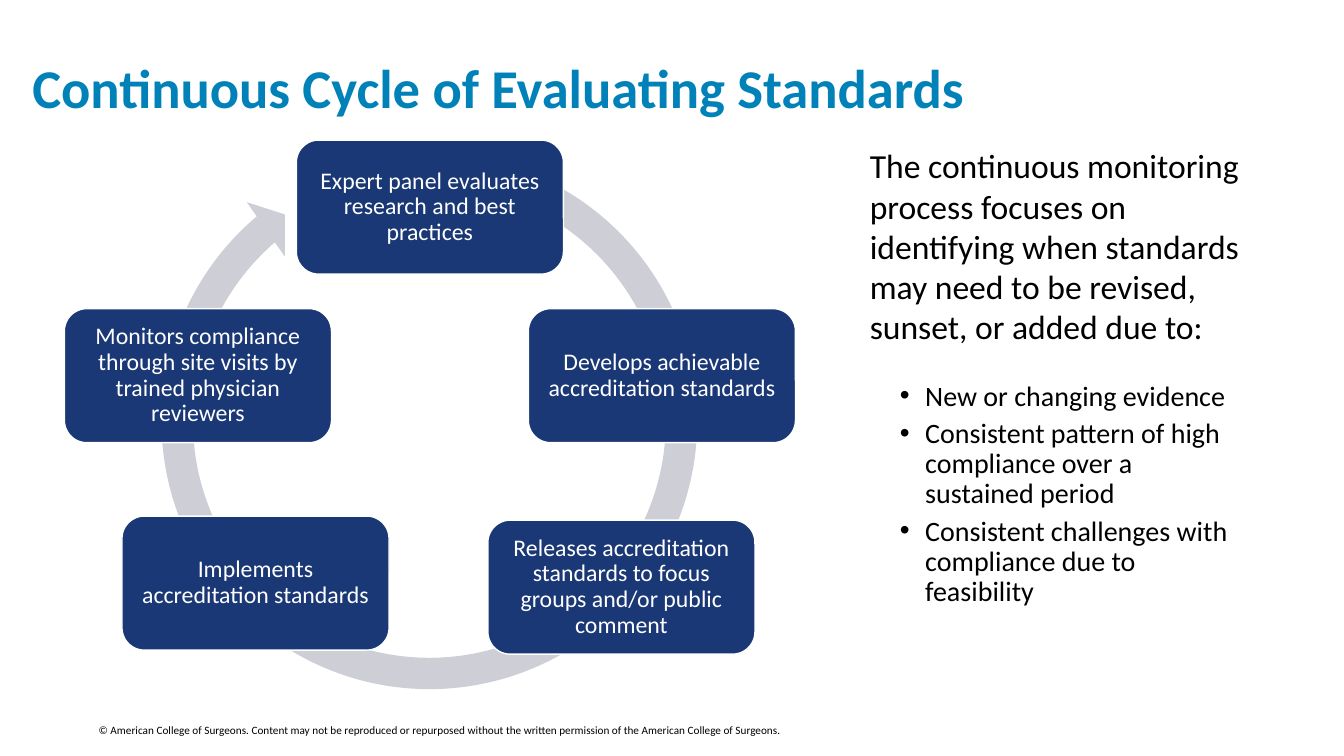
"""Build a slide on the continuous cycle of evaluating standards."""
from math import cos, radians, sin

from lxml import etree
from pptx import Presentation
from pptx.dml.color import RGBColor
from pptx.enum.shapes import MSO_SHAPE
from pptx.enum.text import MSO_ANCHOR, MSO_AUTO_SIZE, PP_ALIGN
from pptx.oxml.ns import qn
from pptx.util import Inches, Pt

LEFT, CENTER = PP_ALIGN.LEFT, PP_ALIGN.CENTER
TOP, MIDDLE = MSO_ANCHOR.TOP, MSO_ANCHOR.MIDDLE
NO_FIT, GROW = MSO_AUTO_SIZE.NONE, MSO_AUTO_SIZE.SHAPE_TO_FIT_TEXT
ROUNDED, CIRCLE_ARROW = MSO_SHAPE.ROUNDED_RECTANGLE, MSO_SHAPE.CIRCULAR_ARROW

COLOURS = {"title": "0082B8", "step": "1A3875", "ring": "CDCED6",
           "white": "FFFFFF", "black": "000000"}
WIDTH, HEIGHT = Inches(13.333), Inches(7.5)
COLUMNS = 160
CELL = WIDTH / COLUMNS

STEP_SIZE = (31.8, 15.96)
CYCLE_CENTRE = (51.18, 53.7)
CYCLE_RADIUS = 29.04
STEPS = [
    ("Expert panel evaluates research and best practices", (0, 0)),
    ("Develops achievable accreditation standards", (0, 0)),
    ("Releases accreditation standards to focus groups and/or public comment",
     (5.73, -7.29)),
    ("Implements accreditation standards", (-3.69, -7.77)),
    ("Monitors compliance through site visits by trained physician reviewers",
     (0, 0)),
]
REASONS = [
    "New or changing evidence",
    "Consistent pattern of high compliance over a sustained period",
    "Consistent challenges with compliance due to feasibility",
]


def colour(name):
    return RGBColor.from_string(COLOURS[name])


def apply(target, values):
    for name, value in values.items():
        setattr(target, name, value)


class CycleSlide:
    """Holds the style and the current slide, measured in square grid cells."""

    font_name = "Calibri"

    def __init__(self, presentation):
        self.slide = presentation.slides.add_slide(presentation.slide_layouts[5])

    def place(self, *cells):
        return [round(cell * CELL) for cell in cells]

    def fill_text(self, frame, paragraphs, size, ink="black", bold=False,
                  bullet=None, frame_format=None, paragraph_format=None):
        apply(frame, {"word_wrap": True, "auto_size": NO_FIT,
                      "vertical_anchor": TOP, **(frame_format or {})})
        for index, words in enumerate(paragraphs):
            paragraph = frame.add_paragraph() if index else frame.paragraphs[0]
            apply(paragraph, {"alignment": LEFT, **(paragraph_format or {})})
            if bullet:
                paragraph.space_before = Pt(5 if index else 0)
                self.add_bullet(paragraph, bullet)
            run = paragraph.add_run()
            run.text = words
            apply(run.font, {"name": self.font_name, "size": Pt(size), "bold": bold})
            run.font.color.rgb = colour(ink)

    def add_bullet(self, paragraph, mark):
        paragraph.level = 1
        properties = paragraph._p.get_or_add_pPr()
        properties.set("marL", str(Inches(0.75)))
        properties.set("indent", str(Inches(-0.25)))
        etree.SubElement(properties, qn("a:buFont")).set("typeface", "Arial")
        etree.SubElement(properties, qn("a:buChar")).set("char", mark)

    def title(self, words, cells):
        heading = self.slide.shapes.title
        apply(heading, dict(zip(("left", "top", "width", "height"), self.place(*cells))))
        self.fill_text(heading.text_frame, [words], 39, "title", True,
                       frame_format={"vertical_anchor": MIDDLE},
                       paragraph_format={"line_spacing": 0.9})

    def text(self, paragraphs, cells, size, **style):
        box = self.slide.shapes.add_textbox(*self.place(*cells))
        self.fill_text(box.text_frame, paragraphs, size, **style)

    def shape(self, kind, cells, fill):
        shape = self.slide.shapes.add_shape(kind, *self.place(*cells))
        shape.shadow.inherit = False
        shape.fill.solid()
        shape.fill.fore_color.rgb = colour(fill)
        return shape

    def ring(self, cells, adjustments):
        ring = self.shape(CIRCLE_ARROW, cells, "ring")
        ring.line.fill.background()
        for index, value in enumerate(adjustments):
            ring.adjustments[index] = value

    def step(self, words, centre):
        width, height = STEP_SIZE
        x, y = centre
        step = self.shape(ROUNDED, (x - width / 2, y - height / 2, width, height), "step")
        step.line.color.rgb = colour("white")
        step.line.width = Pt(1)
        sides = ("left", "right", "top", "bottom")
        margins = {f"margin_{side}": Inches(0.07) for side in sides}
        self.fill_text(step.text_frame, [words], 17, "white",
                       frame_format={"vertical_anchor": MIDDLE, **margins},
                       paragraph_format={"alignment": CENTER, "line_spacing": 0.9})

    def cycle(self, steps):
        x, y = CYCLE_CENTRE
        for index, (words, (shift_x, shift_y)) in enumerate(steps):
            angle = radians(index * 360 / len(steps))
            self.step(words, (x + CYCLE_RADIUS * sin(angle) + shift_x,
                              y - CYCLE_RADIUS * cos(angle) + shift_y))


def main():
    presentation = Presentation()
    apply(presentation, {"slide_width": WIDTH, "slide_height": HEIGHT})
    page = CycleSlide(presentation)
    page.text(["© American College of Surgeons. Content may not be reproduced or "
               "repurposed without the written permission of the American College "
               "of Surgeons."], (10.56, 85.56, 138, 2.88), 8,
              frame_format={"auto_size": GROW})
    page.title("Continuous Cycle of Evaluating Standards", (2.64, 5.04, 151.32, 11.64))
    page.ring((17.16, 16.2, 67.92, 67.92), (0.055, 3.31, 137.74, 173.87, 0.058))
    page.cycle(STEPS)
    page.text(["The continuous monitoring process focuses on identifying when "
               "standards may need to be revised, sunset, or added due to:"],
              (102.36, 16.68, 46.56, 25.44), 24, frame_format={"auto_size": GROW})
    page.text(REASONS, (99.96, 44.88, 48.96, 34.44), 20, bullet="•",
              paragraph_format={"line_spacing": 0.9})
    presentation.save("out.pptx")


if __name__ == "__main__":
    main()
